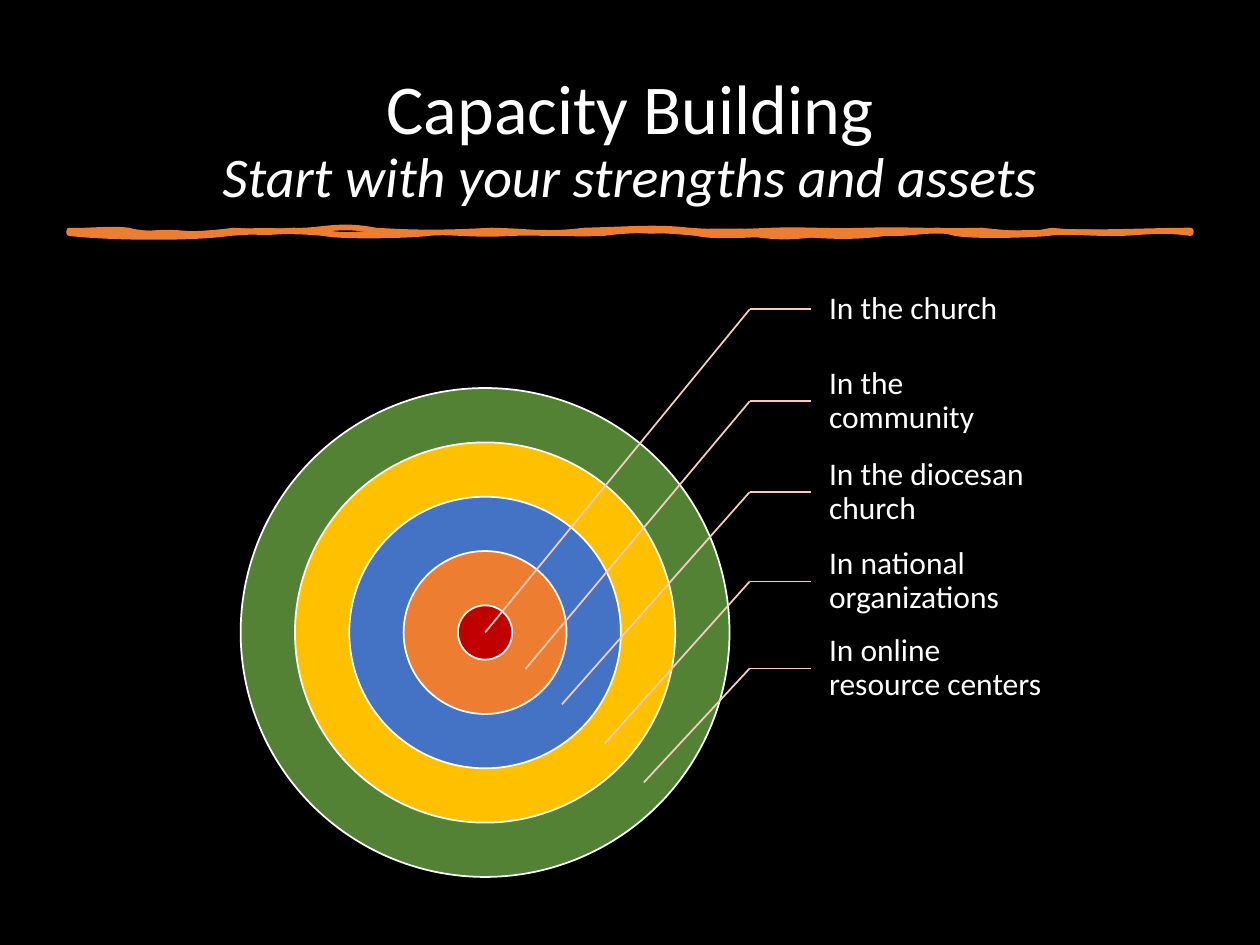
from dataclasses import dataclass

import pptx
import pptx.dml.color
import pptx.enum.shapes
import pptx.enum.text
import pptx.oxml.ns
import pptx.util
from lxml import etree

Inches = pptx.util.Inches
Pt = pptx.util.Pt
RGB = pptx.dml.color.RGBColor.from_string
qn = pptx.oxml.ns.qn


@dataclass(frozen=True)
class Theme:
    font: str = "Calibri"
    background: str = "000000"
    text: str = "FFFFFF"
    accent: str = "ED7D31"
    leader: str = "F6CCBE"
    title_size: int = 40
    subtitle_size: int = 32
    label_size: int = 18
    thin: float = 1
    brush: float = 3.25


@dataclass(frozen=True)
class Level:
    label: str
    color: str
    label_top: float
    target: tuple[float, float]  # where the leader points inside the ring


THEME = Theme()

# Levels from the innermost ring outwards
LEVELS = [
    Level("In the church", "C00000", 2.11, (3.85, 5.02)),
    Level("In the community", "ED7D31", 2.84, (4.17, 5.31)),
    Level("In the diocesan church", "4472C4", 3.56, (4.46, 5.59)),
    Level("In national organizations", "FFC000", 4.27, (4.8, 5.9)),
    Level("In online resource centers", "548235", 4.96, (5.11, 6.21)),
]
CENTER_X, CENTER_Y = 3.85, 5.02
OUTER_DIAMETER = 3.88
ELBOW_X, LABEL_X = 5.95, 6.44
LABEL_W, LABEL_H = 1.94, 0.69

# Brushed rule: each row holds two control points and an end point
RULE_START, RULE_END = (0.55, 1.83), (9.45, 1.85)
RULE_OUTLINE = [
    (0.64, 1.84, 0.89, 1.81, 1.02, 1.83), (1.14, 1.87, 1.6, 1.87, 1.85, 1.83),
    (2.13, 1.85, 2.16, 1.84, 2.33, 1.83), (2.54, 1.84, 2.68, 1.77, 2.98, 1.83),
    (3.31, 1.85, 3.52, 1.85, 3.9, 1.83), (4.31, 1.84, 4.28, 1.87, 4.64, 1.83),
    (5.03, 1.82, 5.2, 1.8, 5.47, 1.83), (5.73, 1.85, 5.88, 1.84, 6.13, 1.83),
    (6.41, 1.82, 6.51, 1.84, 6.87, 1.83), (7.21, 1.82, 7.41, 1.84, 7.79, 1.83),
    (8.17, 1.87, 8.19, 1.86, 8.35, 1.83), (8.55, 1.86, 9.13, 1.83, 9.45, 1.83),
    (9.45, 1.84, 9.45, 1.85, 9.45, 1.85), (9.2, 1.81, 8.95, 1.86, 8.8, 1.85),
    (8.63, 1.85, 8.45, 1.83, 8.32, 1.85), (8.22, 1.86, 7.77, 1.88, 7.58, 1.85),
    (7.43, 1.8, 7.27, 1.86, 7.02, 1.85), (6.76, 1.89, 6.5, 1.87, 6.28, 1.85),
    (6.07, 1.85, 5.7, 1.89, 5.53, 1.85), (5.32, 1.83, 5.08, 1.81, 4.79, 1.85),
    (4.5, 1.86, 4.35, 1.84, 4.05, 1.85), (3.74, 1.87, 3.56, 1.83, 3.4, 1.85),
    (3.23, 1.87, 2.71, 1.88, 2.57, 1.85), (2.38, 1.83, 2.06, 1.83, 1.82, 1.85),
    (1.56, 1.89, 0.91, 1.89, 0.55, 1.85), (0.55, 1.85, 0.55, 1.84, 0.55, 1.83),
]
RULE_FILL = [
    (0.7, 1.81, 0.96, 1.85, 1.2, 1.83), (1.44, 1.81, 1.46, 1.85, 1.68, 1.83),
    (1.92, 1.8, 2.36, 1.81, 2.6, 1.83), (2.86, 1.87, 3.04, 1.79, 3.25, 1.83),
    (3.48, 1.86, 3.6, 1.83, 3.9, 1.83), (4.19, 1.82, 4.6, 1.91, 4.82, 1.83),
    (5.06, 1.79, 5.12, 1.83, 5.39, 1.83), (5.67, 1.8, 6.08, 1.82, 6.31, 1.83),
    (6.58, 1.85, 6.82, 1.84, 7.23, 1.83), (7.67, 1.82, 7.61, 1.84, 7.97, 1.83),
    (8.27, 1.82, 8.85, 1.84, 9.45, 1.83), (9.45, 1.84, 9.45, 1.85, 9.45, 1.85),
    (9.26, 1.84, 9.16, 1.85, 8.98, 1.85), (8.84, 1.82, 8.4, 1.8, 8.06, 1.85),
    (7.75, 1.86, 7.69, 1.87, 7.49, 1.85), (7.34, 1.85, 7.07, 1.78, 6.75, 1.85),
    (6.44, 1.87, 6.27, 1.95, 5.83, 1.85), (5.38, 1.8, 5.3, 1.87, 5.09, 1.85),
    (4.87, 1.82, 4.79, 1.88, 4.61, 1.85), (4.44, 1.85, 4.34, 1.87, 4.05, 1.85),
    (3.79, 1.85, 3.36, 1.86, 3.13, 1.85), (2.92, 1.89, 2.65, 1.85, 2.39, 1.85),
    (2.11, 1.83, 2, 1.83, 1.82, 1.85), (1.64, 1.88, 0.9, 1.9, 0.55, 1.85),
    (0.55, 1.85, 0.55, 1.84, 0.55, 1.83),
]


def format_run(r, size: float, italic: bool = False) -> None:
    r.font.name = THEME.font
    r.font.size = Pt(size)
    r.font.italic = italic
    r.font.color.rgb = RGB(THEME.text)


def set_fill(sp, color: str) -> None:
    sp.fill.solid()
    sp.fill.fore_color.rgb = RGB(color)


def set_line(sp, color: str, width: float) -> None:
    sp.line.color.rgb = RGB(color)
    sp.line.width = Pt(width)


def add_title(s) -> None:
    sp = s.shapes.title
    sp.left, sp.top, sp.width, sp.height = map(Inches, (0.69, 0.4, 8.62, 1.45))
    tf = sp.text_frame
    tf.text = "Capacity Building\vStart with your strengths and assets"
    tf.auto_size = pptx.enum.text.MSO_AUTO_SIZE.NONE
    tf.vertical_anchor = pptx.enum.text.MSO_ANCHOR.MIDDLE
    p = tf.paragraphs[0]
    p.alignment = pptx.enum.text.PP_ALIGN.CENTER
    p.line_spacing = 0.9
    format_run(p.runs[0], THEME.title_size)
    format_run(p.runs[1], THEME.subtitle_size, italic=True)
    # The line break takes the size of the first line
    br = tf._txBody.find(".//" + qn("a:br"))
    etree.SubElement(br, qn("a:rPr")).set("sz", str(THEME.title_size * 100))


def add_curve_path(sp, paths, curves: list, **paint: str) -> None:
    path = etree.SubElement(paths, qn("a:path"), w=str(sp.width), h=str(sp.height), **paint)

    def add_command(tag: str, coords: tuple) -> None:
        command = etree.SubElement(path, qn(tag))
        for x, y in zip(coords[::2], coords[1::2]):
            etree.SubElement(command, qn("a:pt"), x=str(Inches(x) - sp.left),
                             y=str(Inches(y) - sp.top))

    add_command("a:moveTo", RULE_START)
    for curve in curves:
        add_command("a:cubicBezTo", curve)
    add_command("a:close", ())


def add_brushed_rule(s) -> None:
    builder = s.shapes.build_freeform(*map(Inches, RULE_START))
    builder.add_line_segments([tuple(map(Inches, RULE_END))])
    sp = builder.convert_to_shape()
    sp.shadow.inherit = False
    set_fill(sp, THEME.accent)
    set_line(sp, THEME.accent, THEME.brush)
    # Curved paths: a stroked outline and a filled body
    paths = sp._element.find(".//" + qn("a:pathLst"))
    paths.remove(paths[0])
    add_curve_path(sp, paths, RULE_OUTLINE, fill="none")
    add_curve_path(sp, paths, RULE_FILL, stroke="0")


def add_ring(s, diameter: float, color: str) -> None:
    sp = s.shapes.add_shape(
        pptx.enum.shapes.MSO_SHAPE.OVAL,
        Inches(CENTER_X - diameter / 2), Inches(CENTER_Y - diameter / 2),
        Inches(diameter), Inches(diameter))
    sp.shadow.inherit = False
    set_fill(sp, color)
    set_line(sp, THEME.text, THEME.thin)


def add_leader(s, start: tuple, end: tuple):
    line = s.shapes.add_connector(
        pptx.enum.shapes.MSO_CONNECTOR.STRAIGHT, *map(Inches, start + end))
    set_line(line, THEME.leader, THEME.thin)
    etree.SubElement(line._element.spPr, qn("a:effectLst"))
    return line


def add_label(s, level: Level) -> None:
    sp = s.shapes.add_textbox(*map(Inches, (LABEL_X, level.label_top, LABEL_W, LABEL_H)))
    tf = sp.text_frame
    tf.word_wrap = True
    tf.vertical_anchor = pptx.enum.text.MSO_ANCHOR.MIDDLE
    tf.margin_left = Inches(0.14)
    tf.margin_top = tf.margin_right = tf.margin_bottom = Inches(0.03)
    tf.text = level.label
    p = tf.paragraphs[0]
    p.line_spacing = 0.9
    format_run(p.runs[0], THEME.label_size)
    # Elbow from the label into its ring
    middle = level.label_top + LABEL_H / 2
    add_leader(s, (ELBOW_X, middle), (LABEL_X, middle)).end_connect(sp, 1)
    add_leader(s, (ELBOW_X, middle), level.target)


def main() -> None:
    prs = pptx.Presentation()
    prs.slide_width, prs.slide_height = Inches(10), Inches(7.5)
    s = prs.slides.add_slide(prs.slide_layouts[5])
    set_fill(s.background, THEME.background)

    # Heading and rule
    add_title(s)
    add_brushed_rule(s)

    # Target: equal ring widths, largest disc at the back
    core = OUTER_DIAMETER / (2 * len(LEVELS) - 1)
    for i, level in reversed(list(enumerate(LEVELS))):
        add_ring(s, core * (2 * i + 1), level.color)
    for level in LEVELS:
        add_label(s, level)
    prs.save("out.pptx")


if __name__ == "__main__":
    main()
